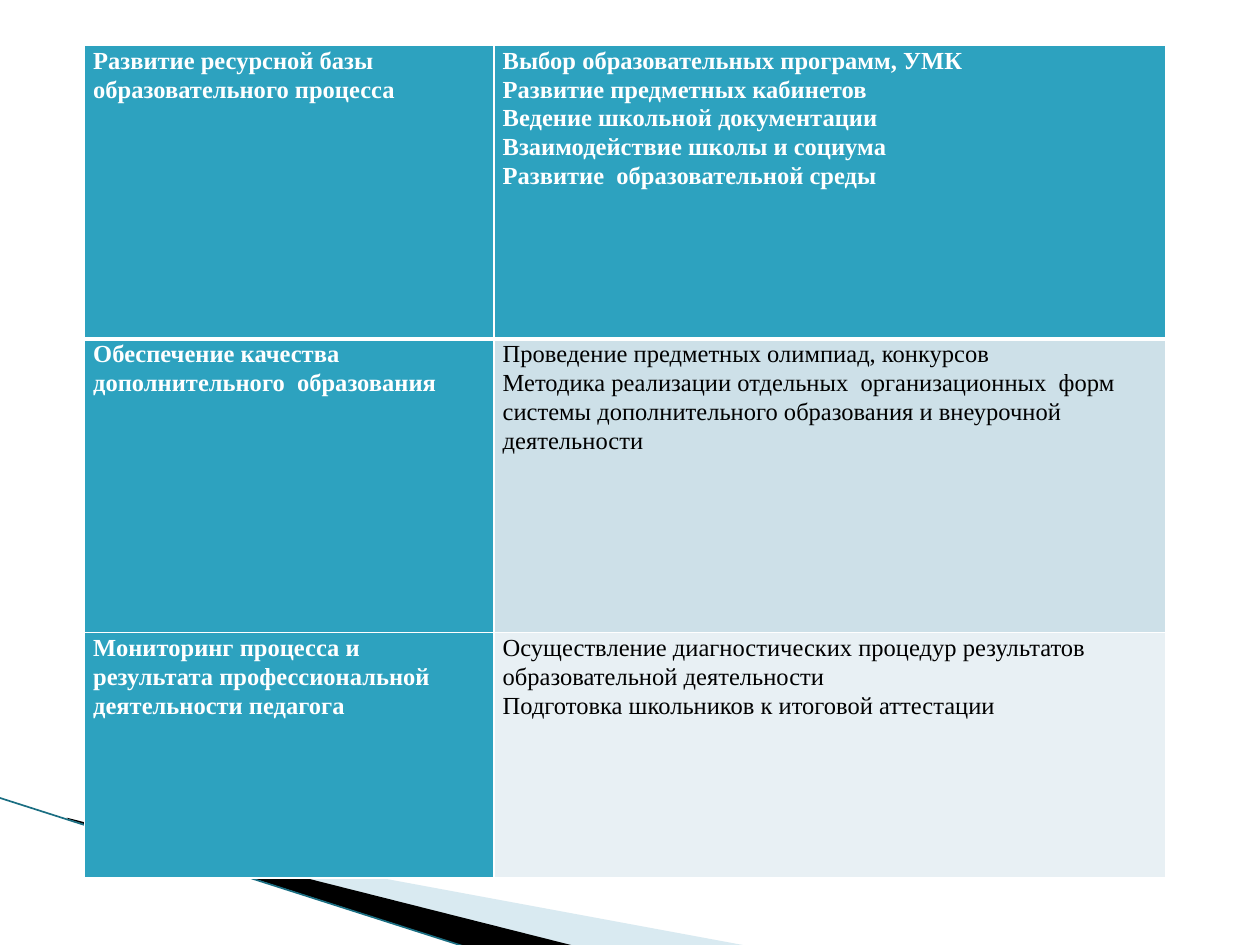
from lxml import etree
from pptx import Presentation
from pptx.dml.color import RGBColor
from pptx.enum.shapes import MSO_CONNECTOR
from pptx.oxml.ns import qn
from pptx.util import Inches, Pt

STRAIGHT = MSO_CONNECTOR.STRAIGHT
FONT = "Times New Roman"
WHITE = RGBColor(0xFF, 0xFF, 0xFF)
BLACK = RGBColor(0, 0, 0)
TEAL = RGBColor(0x2D, 0xA2, 0xBF)
DARK_TEAL = RGBColor(0x1A, 0x6E, 0x82)
PALE_TEAL = RGBColor(0xA0, 0xCB, 0xDC)
BAND_DARK = RGBColor(0xCD, 0xE0, 0xE8)
BAND_LIGHT = RGBColor(0xE8, 0xF0, 0xF4)

# Area of work, its activities, fill of the activities cell
AREAS = [
    ("Развитие ресурсной базы  образовательного процесса",
     ["Выбор образовательных программ, УМК",
      "Развитие предметных кабинетов",
      "Ведение школьной документации",
      "Взаимодействие школы и социума",
      "Развитие  образовательной среды"], TEAL),
    ("Обеспечение качества дополнительного  образования",
     ["Проведение предметных олимпиад, конкурсов",
      "Методика реализации отдельных  организационных  форм системы "
      "дополнительного образования и внеурочной деятельности"], BAND_DARK),
    ("Мониторинг процесса и результата профессиональной деятельности педагога",
     ["Осуществление диагностических процедур результатов "
      "образовательной деятельности",
      "Подготовка школьников к итоговой аттестации"], BAND_LIGHT),
]
COLUMN_WIDTHS = [3.25, 5.33]
ROW_HEIGHTS = [2.33, 2.33, 1.95]

# Corner ribbons: outline, fill, opacity in percent
RIBBONS = [
    ([(0.55, 6.51), (5.95, 7.51), (4.56, 7.51), (0.55, 6.5)], PALE_TEAL, 40),
    ([(0.53, 6.49), (4.57, 7.51), (3.72, 7.52), (0.54, 6.5)], BLACK, 100),
]


def add_ribbon(slide, outline, color, opacity):
    points = [(Inches(x), Inches(y)) for x, y in outline]
    builder = slide.shapes.build_freeform(*points[0], scale=1.0)
    builder.add_line_segments(points[1:], close=True)
    ribbon = builder.convert_to_shape()
    ribbon.shadow.inherit = False
    ribbon.fill.solid()
    ribbon.fill.fore_color.rgb = color
    ribbon.line.fill.background()
    if opacity < 100:
        rgb = ribbon.fill._xPr.find(qn("a:solidFill")).find(qn("a:srgbClr"))
        etree.SubElement(rgb, qn("a:alpha"), val=str(opacity * 1000))


def add_edge(slide, start, end, color, width):
    edge = slide.shapes.add_connector(STRAIGHT, *map(Inches, start + end))
    edge.line.color.rgb = color
    edge.line.width = Pt(width)
    etree.SubElement(edge._element.spPr, qn("a:effectLst"))


def set_borders(cell, color, **widths):
    """Draw cell borders; they must come before the fill in the cell XML."""
    properties = cell._tc.get_or_add_tcPr()
    for position, side in enumerate(("L", "R", "T", "B")):
        border = etree.Element(qn(f"a:ln{side}"), w=str(Pt(widths.get(side, 1))))
        fill = etree.SubElement(border, qn("a:solidFill"))
        etree.SubElement(fill, qn("a:srgbClr"), val=str(color))
        properties.insert(position, border)


def write(frame, lines, *, color, bold, size=14, spacing=1.07):
    frame.word_wrap = True
    for index, line in enumerate(lines):
        paragraph = frame.add_paragraph() if index else frame.paragraphs[0]
        paragraph.line_spacing = spacing
        run = paragraph.add_run()
        run.text = line
        run.font.name = FONT
        run.font.size = Pt(size)
        run.font.bold = bold
        run.font.color.rgb = color


def fill_cell(cell, lines, fill, *, header, borders):
    cell.margin_left = cell.margin_right = Inches(0.07)
    cell.margin_top = cell.margin_bottom = 0
    cell.fill.solid()
    cell.fill.fore_color.rgb = fill
    set_borders(cell, WHITE, **borders)
    write(cell.text_frame, lines, color=WHITE if header else BLACK, bold=header)


def add_areas_table(slide):
    table = slide.shapes.add_table(
        len(AREAS), len(COLUMN_WIDTHS), Inches(0.67), Inches(0.36),
        Inches(sum(COLUMN_WIDTHS)), Inches(sum(ROW_HEIGHTS))).table
    for column, width in zip(table.columns, COLUMN_WIDTHS):
        column.width = Inches(width)
    for row, height in zip(table.rows, ROW_HEIGHTS):
        row.height = Inches(height)
    for index, (area, activities, fill) in enumerate(AREAS):
        borders = {0: {"B": 3}, 1: {"T": 3}}.get(index, {})
        fill_cell(table.cell(index, 0), [area], TEAL, header=True, borders=borders)
        fill_cell(table.cell(index, 1), activities, fill,
                  header=index == 0, borders=borders)


def main():
    deck = Presentation()
    deck.slide_width, deck.slide_height = Inches(10), Inches(7.5)
    slide = deck.slides.add_slide(deck.slide_layouts[6])
    for outline, color, opacity in RIBBONS:
        add_ribbon(slide, outline, color, opacity)
    add_edge(slide, (-0.01, 6.33), (3.71, 7.52), DARK_TEAL, 0.95)
    add_areas_table(slide)
    deck.save("out.pptx")


if __name__ == "__main__":
    main()
